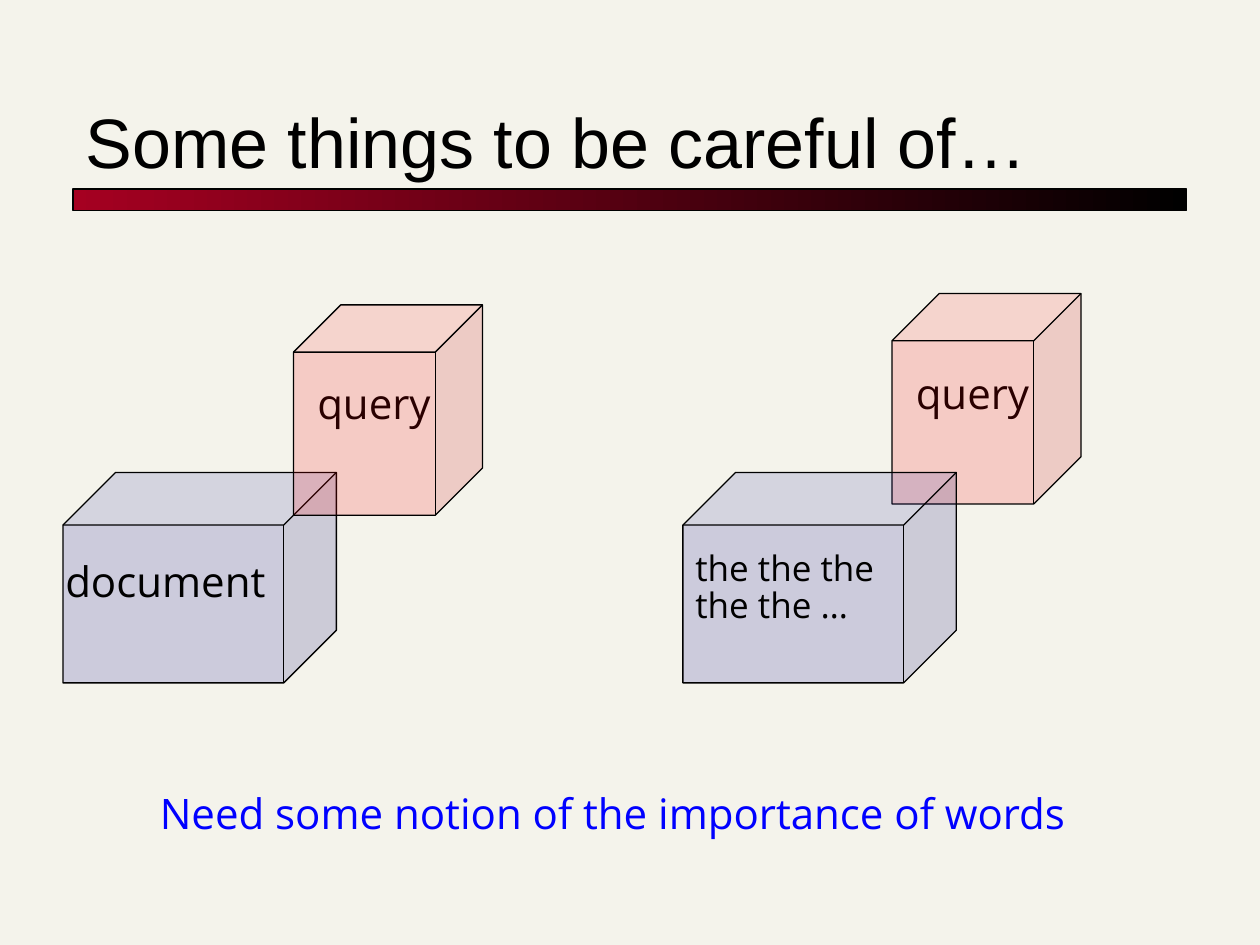
from dataclasses import dataclass

import pptx
import pptx.dml.color
import pptx.enum.shapes
import pptx.enum.text
import pptx.oxml
import pptx.oxml.ns
import pptx.util

Inches = pptx.util.Inches
Pt = pptx.util.Pt
RGBColor = pptx.dml.color.RGBColor
MSO_SHAPE = pptx.enum.shapes.MSO_SHAPE
PP_ALIGN = pptx.enum.text.PP_ALIGN
MSO_ANCHOR = pptx.enum.text.MSO_ANCHOR
MSO_AUTO_SIZE = pptx.enum.text.MSO_AUTO_SIZE

CREAM = RGBColor(0xF4, 0xF3, 0xEB)
BLACK = RGBColor(0, 0, 0)
CRIMSON = RGBColor(0xA5, 0x00, 0x21)
NAVY = RGBColor(0x00, 0x00, 0x90)
RED = RGBColor(0xFF, 0, 0)
BLUE = RGBColor(0, 0, 0xFF)
OPACITY = 16
LINE_SPACING = 0.88


@dataclass
class Cube:
    left: float
    top: float
    width: float
    color: RGBColor
    height: float = 1.67


@dataclass
class Label:
    left: float
    top: float
    width: float
    lines: tuple[str, ...]
    height: float = 0.5
    size: int = 24
    color: RGBColor = BLACK
    wrap: bool = False


# Back to front
ITEMS = [
    Cube(0.5, 3.75, 2.17, NAVY),
    Label(2.42, 3, 1.13, ("query",)),
    Cube(2.33, 2.42, 1.5, RED),
    Label(7.17, 2.92, 1.13, ("query",)),
    Cube(7.08, 2.33, 1.5, RED),
    Label(1.17, 6.25, 7.92, ("Need some notion of the importance of words",),
          color=BLUE, wrap=True),
    Cube(5.42, 3.75, 2.17, NAVY),
    Label(0.42, 4.41, 1.84, ("document",)),
    Label(5.42, 4.33, 1.69, ("the the the", "the the …"), height=0.77, size=20),
]


def apply_format(target, values: dict) -> None:
    for name, value in values.items():
        setattr(target, name, value)


def add_outlined(slide, kind, left: float, top: float, width: float, height: float):
    sp = slide.shapes.add_shape(kind, Inches(left), Inches(top),
                                Inches(width), Inches(height))
    sp.shadow.inherit = False
    sp.line.color.rgb = BLACK
    sp.line.width = Pt(0.75)
    return sp


def add_title(slide, text: str) -> None:
    sp = slide.shapes.title
    apply_format(sp, {"left": Inches(0.58), "top": Inches(0.42),
                      "width": Inches(8.83), "height": Inches(1.08)})
    tf = sp.text_frame
    apply_format(tf, {"text": text, "vertical_anchor": MSO_ANCHOR.BOTTOM,
                      "auto_size": MSO_AUTO_SIZE.NONE})
    p = tf.paragraphs[0]
    p.alignment = PP_ALIGN.LEFT
    r = p.runs[0]
    apply_format(r.font, {"name": "Arial", "size": Pt(40)})
    r.font.color.rgb = BLACK


def add_rule(slide) -> None:
    sp = add_outlined(slide, MSO_SHAPE.RECTANGLE, 0.58, 1.5, 8.84, 0.17)
    sp.fill.gradient()
    sp.fill.gradient_angle = 0
    for stop, color in zip(sp.fill.gradient_stops, (CRIMSON, BLACK)):
        stop.color.rgb = color


def add_cube(slide, cube: Cube) -> None:
    sp = add_outlined(slide, MSO_SHAPE.CUBE, cube.left, cube.top,
                      cube.width, cube.height)
    sp.fill.solid()
    sp.fill.fore_color.rgb = cube.color
    # Transparency
    qn = pptx.oxml.ns.qn
    color = sp.fill._xPr.find(qn("a:solidFill")).find(qn("a:srgbClr"))
    color.append(pptx.oxml.parse_xml(
        f'<a:alpha {pptx.oxml.ns.nsdecls("a")} val="{OPACITY * 1000}"/>'))


def add_label(slide, label: Label) -> None:
    sp = slide.shapes.add_textbox(Inches(label.left), Inches(label.top),
                                  Inches(label.width), Inches(label.height))
    tf = sp.text_frame
    apply_format(tf, {"text": "\n".join(label.lines), "word_wrap": label.wrap,
                      "auto_size": MSO_AUTO_SIZE.SHAPE_TO_FIT_TEXT})
    for p in tf.paragraphs:
        p.line_spacing = LINE_SPACING
        r = p.runs[0]
        apply_format(r.font, {"name": "Open Sans", "size": Pt(label.size)})
        r.font.color.rgb = label.color


def main() -> None:
    prs = pptx.Presentation()
    prs.slide_width, prs.slide_height = Inches(10), Inches(7.5)
    s = prs.slides.add_slide(prs.slide_layouts[5])
    s.background.fill.solid()
    s.background.fill.fore_color.rgb = CREAM

    # Heading
    add_title(s, "Some things to be careful of…")
    add_rule(s)

    # Overlapping cubes and their labels
    for item in ITEMS:
        if isinstance(item, Cube):
            add_cube(s, item)
        else:
            add_label(s, item)

    prs.save("out.pptx")


if __name__ == "__main__":
    main()
